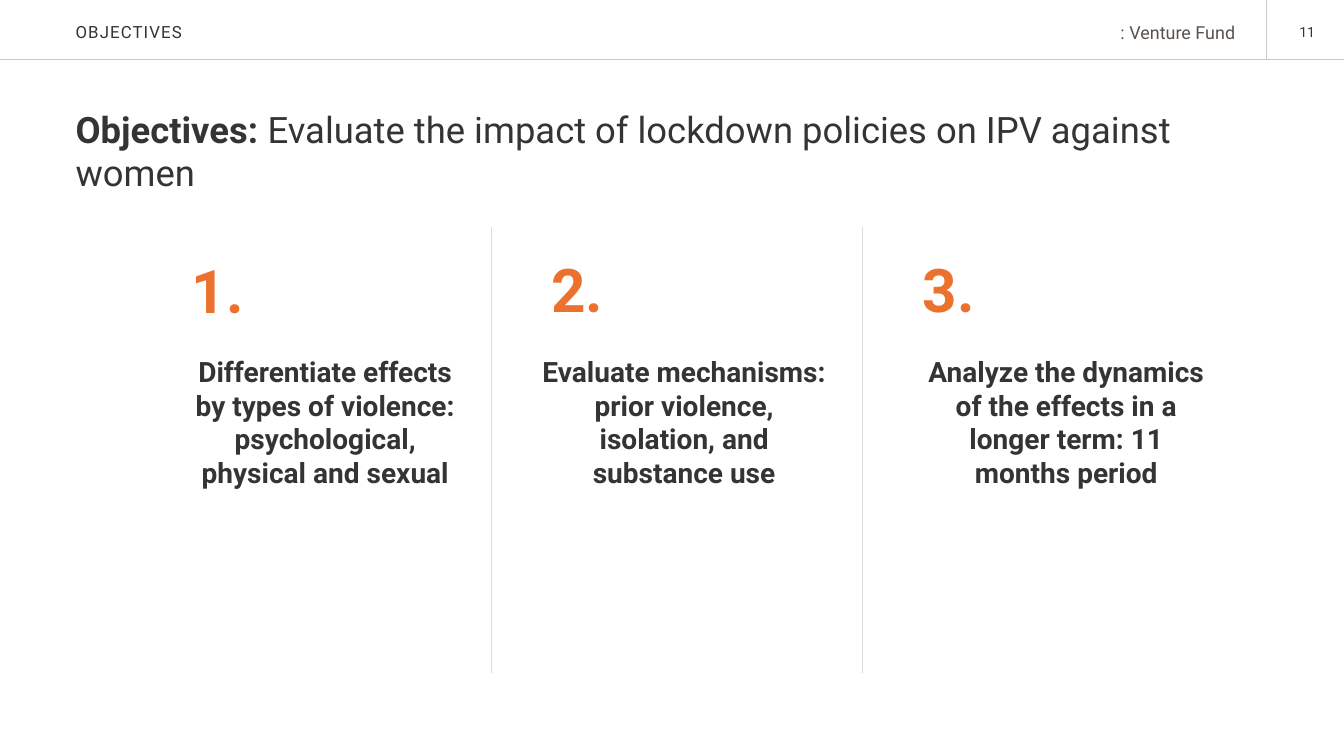
from lxml import etree
from pptx import Presentation
from pptx.dml.color import RGBColor
from pptx.enum.shapes import MSO_CONNECTOR as CONNECTOR, MSO_SHAPE as SHAPE
from pptx.enum.text import MSO_ANCHOR as ANCHOR, PP_ALIGN as ALIGN
from pptx.oxml.ns import qn
from pptx.util import Inches, Pt

COLORS = {
    "ink": "353435",
    "muted": "5A514B",
    "accent": "EC712E",
    "header_rule": "CEC8C4",
    "column_rule": "DEDAD8",
}
FONT = "Roboto"
TEXT_INSETS = (0.1, 0.05, 0.1, 0.05)
NO_INSETS = (0, 0, 0, 0)
CARD_INSETS = (0, 0.1, 0.1, 0.1)

# Number, number position, card left and width, text
OBJECTIVES = [
    ("1.", (1.9, 2.51), (1.83, 2.89),
     "Differentiate effects by types of violence: psychological, physical and sexual"),
    ("2.", (5.47, 2.5), (5.34, 2.99),
     "Evaluate mechanisms: prior violence, isolation, and substance use"),
    ("3.", (9.15, 2.5), (9.18, 2.89),
     "Analyze the dynamics of the effects in a longer term: 11 months period"),
]


def rgb(color):
    return RGBColor.from_string(COLORS[color])


def fill_text(box, spans, size, color="ink", align=ALIGN.LEFT,
              anchor=ANCHOR.TOP, insets=TEXT_INSETS, tracking=None):
    """Write one paragraph of (text, bold) spans; tracking is in points."""
    frame = box.text_frame
    left, top, right, bottom = map(Inches, insets)
    frame_format = {
        "word_wrap": True,
        "vertical_anchor": anchor,
        "margin_left": left,
        "margin_top": top,
        "margin_right": right,
        "margin_bottom": bottom,
    }
    for name, value in frame_format.items():
        setattr(frame, name, value)
    para = frame.paragraphs[0]
    para.alignment = align
    for text, bold in spans:
        span = para.add_run()
        span.text = text
        for name, value in {"name": FONT, "size": Pt(size), "bold": bold}.items():
            setattr(span.font, name, value)
        span.font.color.rgb = rgb(color)
        if tracking:
            span._r.get_or_add_rPr().set("spc", str(round(tracking * 100)))


def add_text(page, area, spans, size, **text_format):
    box = page.shapes.add_textbox(*map(Inches, area))
    fill_text(box, spans, size, **text_format)


def add_card(page, area, text):
    card = page.shapes.add_shape(SHAPE.ROUNDED_RECTANGLE, *map(Inches, area))
    card.adjustments[0] = 0.02
    card.shadow.inherit = False
    card.fill.background()
    card.line.fill.background()
    fill_text(card, [(text, True)], 20, align=ALIGN.CENTER, insets=CARD_INSETS)


def add_rule(page, start, end, color, width):
    rule = page.shapes.add_connector(CONNECTOR.STRAIGHT, *map(Inches, start + end))
    rule.line.color.rgb = rgb(color)
    rule.line.width = Pt(width)
    etree.SubElement(rule._element.spPr, qn("a:effectLst"))


def add_header(page):
    add_text(page, (12.64, 0.18, 0.5, 0.27), [("11", False)], 10, align=ALIGN.RIGHT)
    add_rule(page, (0, 0.59), (13.33, 0.59), "header_rule", 0.65)
    add_rule(page, (12.56, 0), (12.56, 0.59), "header_rule", 0.65)
    add_text(page, (10.82, 0.16, 1.53, 0.32), [(": Venture Fund", False)], 12.8,
             color="muted", align=ALIGN.RIGHT)
    add_text(page, (0.75, 0.02, 8.4, 0.6), [("OBJECTIVES", False)], 12,
             anchor=ANCHOR.MIDDLE, insets=NO_INSETS, tracking=0.8)


def add_objective(page, number, position, card_span, text):
    add_text(page, position + (2.74, 0.72), [(number, True)], 43,
             color="accent", insets=NO_INSETS)
    left, width = card_span
    add_card(page, (left, 3.4, width, 2.91), text)


def main():
    deck = Presentation()
    deck.slide_width, deck.slide_height = Inches(13.33), Inches(7.5)
    page = deck.slides.add_slide(deck.slide_layouts[6])

    add_header(page)
    headline = [
        ("Objectives: ", True),
        ("Evaluate the impact of lockdown policies on IPV against women", False),
    ]
    add_text(page, (0.75, 1.06, 11.97, 1), headline, 26, insets=NO_INSETS)
    for objective in OBJECTIVES:
        add_objective(page, *objective)
    for x in (4.87, 8.55):
        add_rule(page, (x, 2.25), (x, 6.68), "column_rule", 0.5)

    deck.save("out.pptx")


if __name__ == "__main__":
    main()
